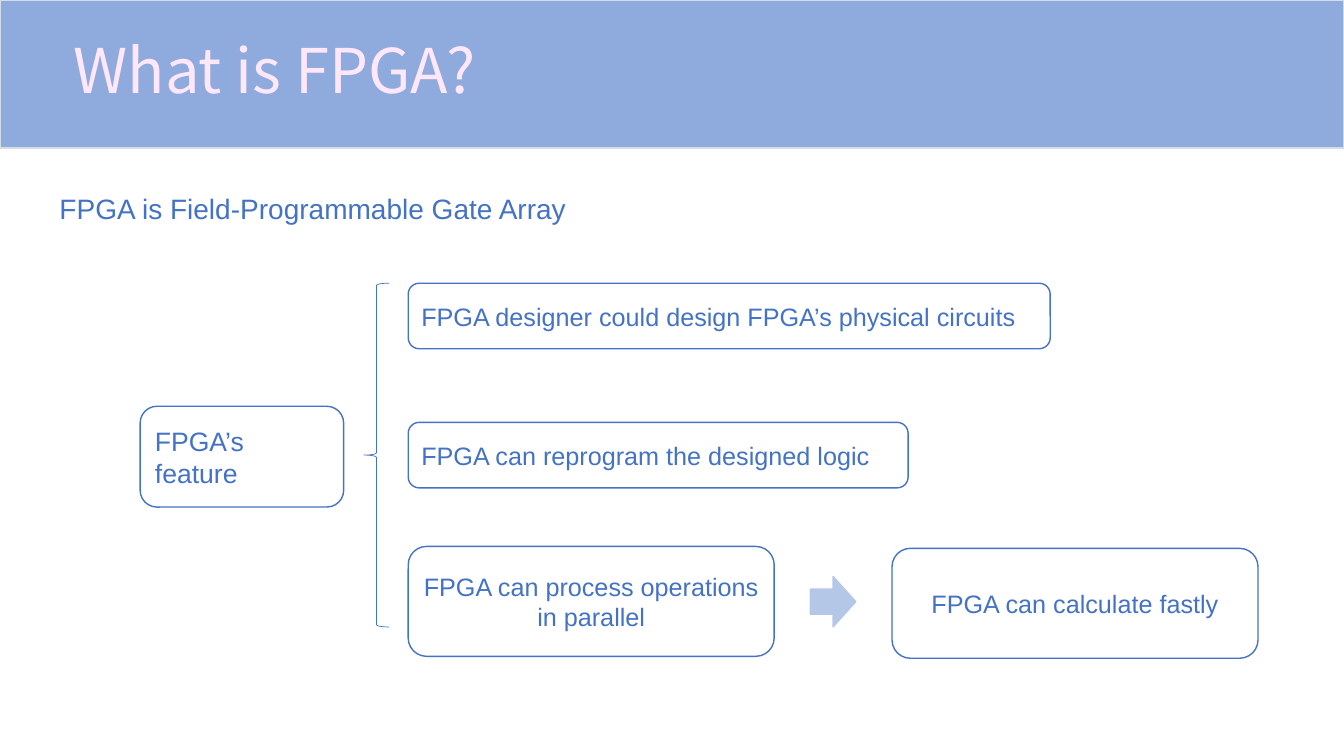
from pptx import Presentation
from pptx.dml.color import RGBColor
from pptx.enum.shapes import MSO_SHAPE as SHAPE
from pptx.enum.text import MSO_ANCHOR as ANCHOR, MSO_AUTO_SIZE as AUTO, PP_ALIGN as ALIGN
from pptx.oxml.ns import qn
from pptx.util import Pt
from lxml import etree

# Content
TITLE = "What is FPGA?"
DEFINITION = "FPGA is Field-Programmable Gate Array"
TOPIC = "FPGA’s feature"
# text, top, width, height, alignment
FEATURES = [
    ("FPGA designer could design FPGA’s physical circuits", 202.3, 458.6, 46.8, ALIGN.LEFT),
    ("FPGA can reprogram the designed logic", 301.7, 357.1, 46.8, ALIGN.LEFT),
    ("FPGA can process operations in parallel", 390.3, 261.4, 78.5, ALIGN.CENTER),
]
RESULT = "FPGA can calculate fastly"

# Layout and colours
WIDTH, HEIGHT = 960, 540
FEATURE_LEFT = 291.6
BLUE, PALE, WHITE = "4472C4", "B4C7E7", "FFFFFF"

prs = Presentation()
prs.slide_width, prs.slide_height = Pt(WIDTH), Pt(HEIGHT)
s = prs.slides.add_slide(prs.slide_layouts[1])


def rgb(color):
    return RGBColor.from_string(color)


def add_shape(kind, box, fill, line, weight=1):
    sp = s.shapes.add_shape(kind, *map(Pt, box))
    sp.shadow.inherit = False
    if fill:
        sp.fill.solid()
        sp.fill.fore_color.rgb = rgb(fill)
    else:
        sp.fill.background()
    sp.line.color.rgb = rgb(line)
    sp.line.width = Pt(weight)
    return sp


def write(sp, text, size, color=BLUE, font="Arial", anchor=ANCHOR.MIDDLE, **paragraph):
    tf = sp.text_frame
    frame = {"word_wrap": True, "auto_size": AUTO.NONE, "vertical_anchor": anchor}
    for name, value in frame.items():
        setattr(tf, name, value)
    p = tf.paragraphs[0]
    for name, value in ({"alignment": ALIGN.LEFT} | paragraph).items():
        setattr(p, name, value)
    r = p.add_run()
    r.text = text
    for name, value in {"name": font, "size": Pt(size)}.items():
        setattr(r.font, name, value)
    r.font.color.rgb = rgb(color)
    return p


def add_box(text, box, size=18, align=ALIGN.LEFT):
    sp = add_shape(SHAPE.ROUNDED_RECTANGLE, box, WHITE, BLUE)
    write(sp, text, size, alignment=align)


def place(sp, box):
    for name, value in zip(("left", "top", "width", "height"), box):
        setattr(sp, name, Pt(value))


# Banner, behind the placeholders
banner = add_shape(SHAPE.RECTANGLE, (0, 0, WIDTH, 105.8), "8FAADC", "D6DCE5")
s.shapes._spTree.insert(2, banner._element)

# Title and definition
title, body = s.placeholders
place(title, (45.4, 2.2, 690.5, 100.8))
write(title, TITLE, 44, "FFE7FA", "Noto Sans CJK KR", line_spacing=0.9)
place(body, (35.3, 136.1, 737.3, 356.4))
p = write(body, DEFINITION, 20, anchor=ANCHOR.TOP, line_spacing=0.9, space_before=Pt(10))
pPr = p._p.get_or_add_pPr()
pPr.set("marL", "0")
pPr.set("indent", "0")
etree.SubElement(pPr, qn("a:buNone"))

# Features, joined to their topic by a brace
for text, top, width, height, align in FEATURES:
    add_box(text, (FEATURE_LEFT, top, width, height), align=align)
add_shape(SHAPE.LEFT_BRACE, (259.9, FEATURES[0][1], 18, 245.5), None, BLUE, 0.5)
add_box(TOPIC, (100.1, 290.2, 145.4, 72), size=19)

# Result of the last feature
_, top, width, height, _ = FEATURES[-1]
add_shape(SHAPE.RIGHT_ARROW, (578.9, 411.8, 32.4, 36), PALE, PALE)
add_box(RESULT, (637.2, top + 1.4, width, height), align=ALIGN.CENTER)

prs.save("out.pptx")
